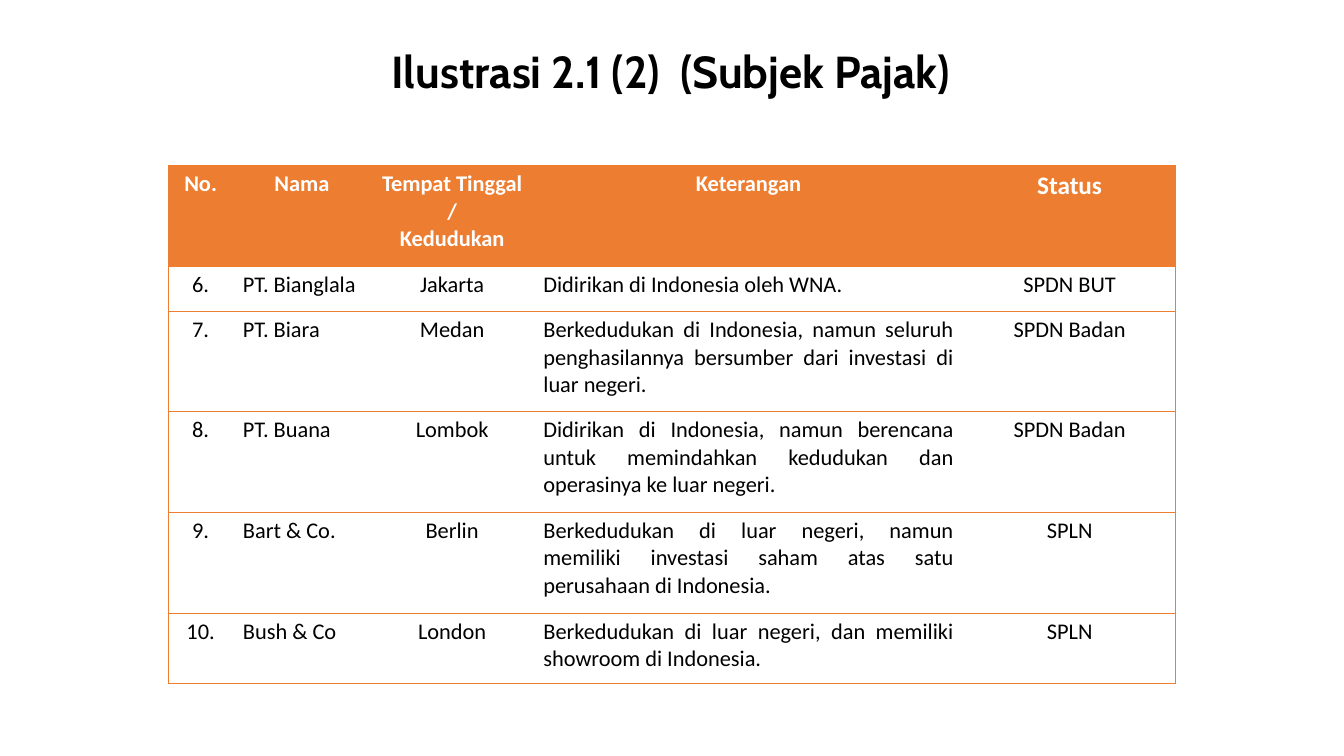
from dataclasses import dataclass

from lxml.etree import SubElement
from pptx import Presentation
from pptx.dml.color import RGBColor as RGB
from pptx.enum.text import MSO_ANCHOR as ANCHOR, MSO_AUTO_SIZE as FIT, PP_ALIGN as AL
from pptx.oxml.ns import qn
from pptx.util import Inches, Pt

# Content
TITLE = "Ilustrasi 2.1 (2)  (Subjek Pajak)"
HEADER = ("No.", "Nama", "Tempat Tinggal /\nKedudukan", "Keterangan", "Status")
SUBJECTS = [
    ("6.", "PT. Bianglala", "Jakarta", "Didirikan di Indonesia oleh WNA.", "SPDN BUT"),
    ("7.", "PT. Biara", "Medan",
     "Berkedudukan di Indonesia, namun seluruh penghasilannya bersumber dari "
     "investasi di luar negeri.", "SPDN Badan"),
    ("8.", "PT. Buana", "Lombok",
     "Didirikan di Indonesia, namun berencana untuk memindahkan kedudukan dan "
     "operasinya ke luar negeri.", "SPDN Badan"),
    ("9.", "Bart & Co.", "Berlin",
     "Berkedudukan di luar negeri, namun memiliki investasi saham atas satu "
     "perusahaan di Indonesia.", "SPLN"),
    ("10.", "Bush & Co", "London",
     "Berkedudukan di luar negeri, dan memiliki showroom di Indonesia.", "SPLN"),
]
COL_WIDTHS = (0.64, 1.37, 1.61, 4.27, 2.1)
COL_ALIGNS = (AL.CENTER, AL.LEFT, AL.CENTER, AL.JUSTIFY, AL.CENTER)
ROW_HEIGHTS = (1, 0.45, 0.99, 1, 1, 0.7)


@dataclass(frozen=True)
class Theme:
    accent: str = "ED7D31"
    black: RGB = RGB(0, 0, 0)
    white: RGB = RGB(255, 255, 255)
    title_font: str = "Cabin"
    body_font: str = "Calibri"
    title_size: int = 32
    body_size: int = 16
    status_size: int = 18
    line: float = 0.5


THEME = Theme()


def format_text(tf, align, font, size, color, bold):
    for p in tf.paragraphs:
        p.alignment = align
        for r in p.runs:
            f = r.font
            f.name, f.size, f.bold = font, Pt(size), bold
            f.color.rgb = color


def set_borders(cell, sides):
    """Draw accent lines on the given sides and none on the others."""
    tc_pr = cell._tc.get_or_add_tcPr()
    for i, side in enumerate("LRTB"):
        ln = SubElement(tc_pr, qn(f"a:ln{side}"), w=str(Pt(THEME.line)))
        tc_pr.remove(ln)
        tc_pr.insert(i, ln)  # borders come before the fill
        if side in sides:
            fill = SubElement(ln, qn("a:solidFill"))
            SubElement(fill, qn("a:srgbClr"), val=THEME.accent)
        else:
            SubElement(ln, qn("a:noFill"))


def add_title(s):
    sp = s.shapes.title
    sp.left, sp.top = Inches(3.04), Inches(0.31)
    sp.width, sp.height = Inches(7.23), Inches(0.78)
    # Rounded outline
    geom = SubElement(sp._element.spPr, qn("a:prstGeom"), prst="roundRect")
    guides = SubElement(geom, qn("a:avLst"))
    SubElement(guides, qn("a:gd"), name="adj", fmla="val 12500")
    sp.fill.background()
    sp.line.fill.background()
    tf = sp.text_frame
    tf.text = TITLE
    tf.word_wrap = False
    tf.auto_size = FIT.NONE
    tf.vertical_anchor = ANCHOR.MIDDLE
    format_text(tf, AL.CENTER, THEME.title_font, THEME.title_size, THEME.black, True)


def add_subject_table(s):
    rows = [HEADER, *SUBJECTS]
    table = s.shapes.add_table(
        len(rows), len(HEADER), Inches(1.67), Inches(1.64),
        Inches(sum(COL_WIDTHS)), Inches(sum(ROW_HEIGHTS))).table
    table.horz_banding = False
    for col, width in zip(table.columns, COL_WIDTHS):
        col.width = Inches(width)
    for row, height in zip(table.rows, ROW_HEIGHTS):
        row.height = Inches(height)

    last = len(HEADER) - 1
    for i, texts in enumerate(rows):
        head = i == 0
        for j, text in enumerate(texts):
            cell = table.cell(i, j)
            cell.text_frame.text = text
            size = THEME.status_size if head and j == last else THEME.body_size
            format_text(cell.text_frame, AL.CENTER if head else COL_ALIGNS[j],
                        THEME.body_font, size,
                        THEME.white if head else THEME.black, head)
            cell.fill.solid()
            cell.fill.fore_color.rgb = RGB.from_string(THEME.accent) if head else THEME.white
            set_borders(cell, "TB" + "L" * (j == 0) + "R" * (j == last))


def main():
    prs = Presentation()
    prs.slide_width, prs.slide_height = Inches(13.33), Inches(7.5)
    s = prs.slides.add_slide(prs.slide_layouts[5])
    add_title(s)
    add_subject_table(s)
    prs.save("out.pptx")


if __name__ == "__main__":
    main()
